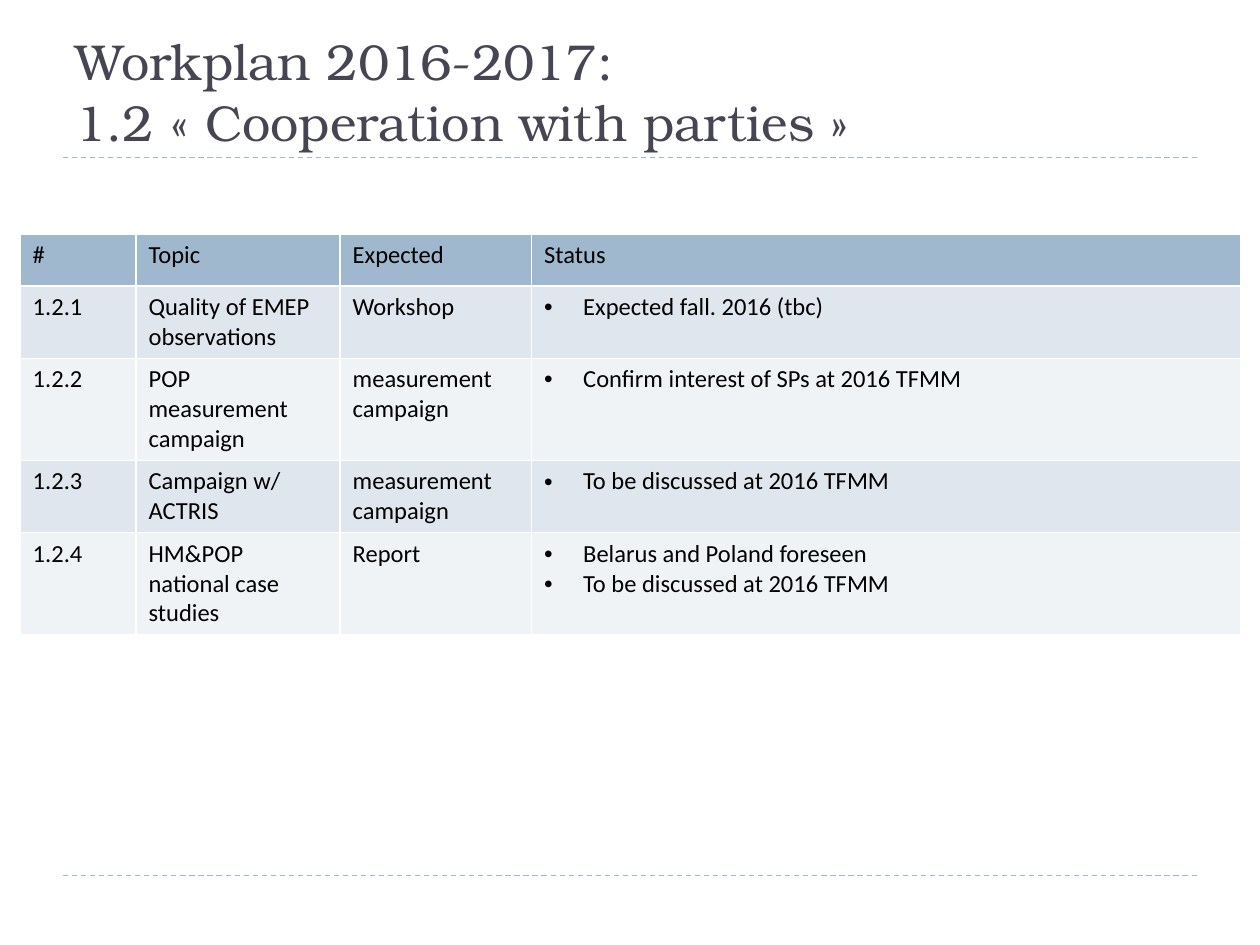
from lxml import etree
from pptx import Presentation
from pptx.dml.color import RGBColor
from pptx.enum.dml import MSO_LINE
from pptx.enum.shapes import MSO_CONNECTOR
from pptx.enum.text import MSO_ANCHOR, PP_ALIGN
from pptx.oxml.ns import qn
from pptx.util import Inches, Pt

STRAIGHT = MSO_CONNECTOR.STRAIGHT
DASH = MSO_LINE.DASH
BOTTOM = MSO_ANCHOR.BOTTOM
LEFT = PP_ALIGN.LEFT

TITLE_FONT, BODY_FONT = "TeX Gyre Bonum", "Calibri"
INK, BLACK, WHITE = "464653", "000000", "FFFFFF"
HEADER_BLUE, BAND_DARK, BAND_LIGHT = "9FB8CD", "DFE6ED", "F0F3F6"

TITLE_LINES = ["Workplan 2016-2017: ", "1.2 «\u00a0Cooperation with parties\u00a0»"]
HEADINGS = ["#", "Topic", "Expected", "Status"]
# Number, topic, expected result, status points
TASKS = [
    ("1.2.1", "Quality of EMEP observations", "Workshop",
     ["Expected fall. 2016 (tbc)"]),
    ("1.2.2", "POP measurement campaign", "measurement campaign",
     ["Confirm interest of SPs at 2016 TFMM"]),
    ("1.2.3", "Campaign w/ ACTRIS", "measurement campaign",
     ["To be discussed at 2016 TFMM"]),
    ("1.2.4", "HM&POP national case studies", "Report",
     ["Belarus and Poland foreseen", "To be discussed at 2016 TFMM"]),
]
COLUMN_WIDTHS = [0.92, 1.62, 1.52, 5.63]
ROW_HEIGHTS = [0.41, 0.57, 0.81, 0.57, 0.81]


def color(hex_code):
    return RGBColor.from_string(hex_code)


def add_run(paragraph, text, font, size, hex_code):
    run = paragraph.add_run()
    run.text = text
    run.font.name = font
    run.font.size = Pt(size)
    run.font.bold = False
    run.font.color.rgb = color(hex_code)


def add_title(slide):
    title = slide.shapes.title
    title.left, title.top = Inches(0.5), Inches(0.17)
    title.width, title.height = Inches(9), Inches(1.08)
    frame = title.text_frame
    frame.word_wrap = True
    frame.vertical_anchor = BOTTOM
    heading = frame.paragraphs[0]
    heading.alignment = LEFT
    for index, line in enumerate(TITLE_LINES):
        if index:
            heading.add_line_break()
        add_run(heading, line, TITLE_FONT, 28.8, INK)


def add_rule(slide, y):
    rule = slide.shapes.add_connector(
        STRAIGHT, Inches(0.5), Inches(y), Inches(9.5), Inches(y))
    rule.line.color.rgb = color(HEADER_BLUE)
    rule.line.width = Pt(0.75)
    rule.line.dash_style = DASH
    etree.SubElement(rule._element.spPr, qn("a:effectLst"))


def add_borders(cell):
    properties = cell._tc.get_or_add_tcPr()
    for side in ("a:lnL", "a:lnR", "a:lnT", "a:lnB"):
        border = etree.SubElement(properties, qn(side), w=str(Pt(1)))
        fill = etree.SubElement(border, qn("a:solidFill"))
        etree.SubElement(fill, qn("a:srgbClr"), val=WHITE)


def add_bullet(paragraph):
    properties = paragraph._p.get_or_add_pPr()
    properties.set("marL", str(Inches(0.31)))
    properties.set("indent", str(Inches(-0.31)))
    etree.SubElement(properties, qn("a:buFont"), typeface="Arial")
    etree.SubElement(properties, qn("a:buChar"), char="•")


def fill_cell(cell, content, background):
    add_borders(cell)  # borders must precede the fill in the XML
    cell.fill.solid()
    cell.fill.fore_color.rgb = color(background)
    bulleted = isinstance(content, list)
    frame = cell.text_frame
    for index, text in enumerate(content if bulleted else [content]):
        paragraph = frame.add_paragraph() if index else frame.paragraphs[0]
        if bulleted:
            add_bullet(paragraph)
        add_run(paragraph, text, BODY_FONT, 14, BLACK)


def add_workplan_table(slide):
    rows = [HEADINGS, *TASKS]
    workplan = slide.shapes.add_table(
        len(rows), len(HEADINGS), Inches(0.16), Inches(1.86),
        Inches(sum(COLUMN_WIDTHS)), Inches(sum(ROW_HEIGHTS))).table
    workplan.first_row = workplan.horz_banding = False
    for column, width in zip(workplan.columns, COLUMN_WIDTHS):
        column.width = Inches(width)
    for r, (contents, height) in enumerate(zip(rows, ROW_HEIGHTS)):
        workplan.rows[r].height = Inches(height)
        band = BAND_DARK if r % 2 else BAND_LIGHT
        for c, content in enumerate(contents):
            fill_cell(workplan.cell(r, c), content, band if r else HEADER_BLUE)


def main():
    prs = Presentation()
    prs.slide_width, prs.slide_height = Inches(10), Inches(7.5)
    slide = prs.slides.add_slide(prs.slide_layouts[5])  # title only

    # Rules above the footer and below the title
    for y in (6.95, 1.25):
        add_rule(slide, y)
    add_title(slide)
    add_workplan_table(slide)

    prs.save("out.pptx")


if __name__ == "__main__":
    main()
